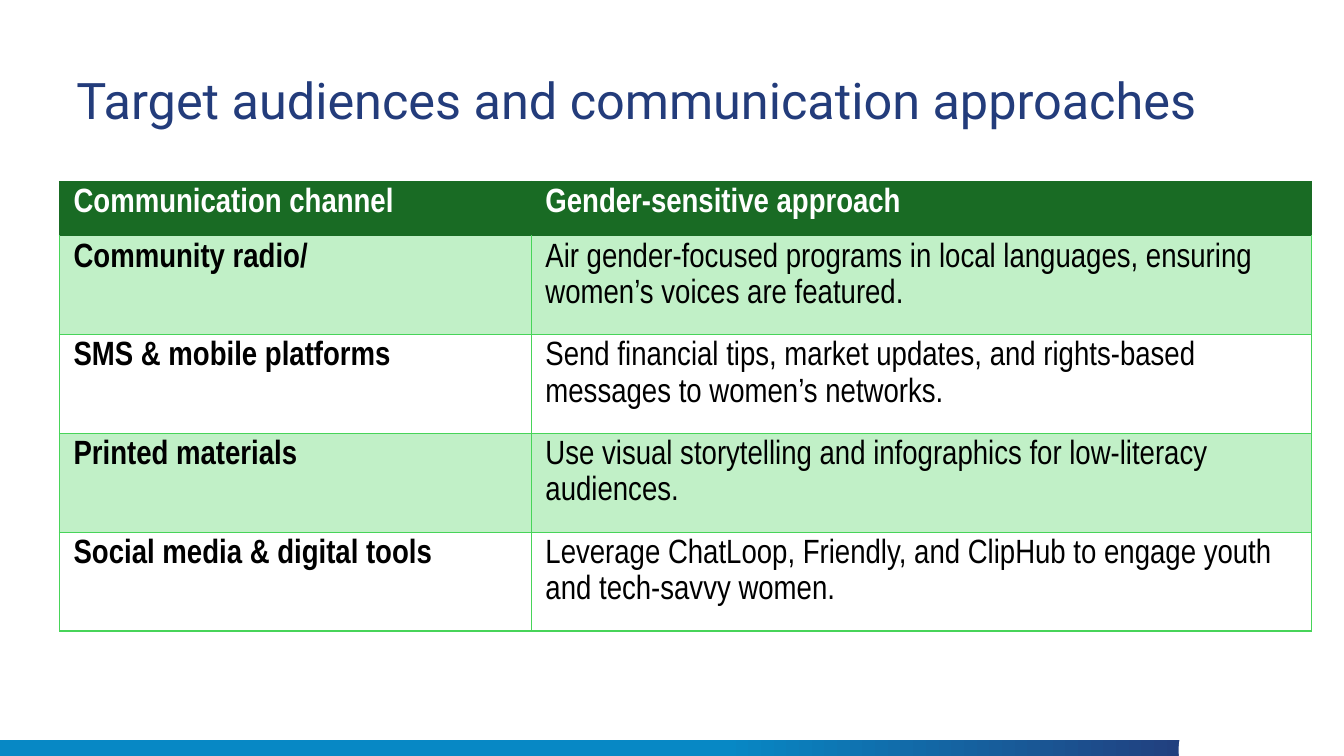
import pptx
import pptx.util
import pptx.dml.color
import pptx.enum.shapes
import pptx.enum.text
import pptx.oxml.ns
import lxml.etree

Inches = pptx.util.Inches
Pt = pptx.util.Pt
RGBColor = pptx.dml.color.RGBColor

NAVY = RGBColor(0x23, 0x3C, 0x7B)
BLUE = RGBColor(0x07, 0x88, 0xC5)
WHITE = RGBColor(0xFF, 0xFF, 0xFF)
BLACK = RGBColor(0x00, 0x00, 0x00)
DARK_GREEN = RGBColor(0x19, 0x6B, 0x24)
PALE_GREEN = RGBColor(0xC1, 0xF0, 0xC7)
LINE_GREEN = RGBColor(0x47, 0xD4, 0x59)

CHANNELS = [
    ("Communication channel", "Gender-sensitive approach"),
    ("Community radio/",
     "Air gender-focused programs in local languages, ensuring women’s voices are featured."),
    ("SMS & mobile platforms",
     "Send financial tips, market updates, and rights-based messages to women’s networks."),
    ("Printed materials",
     "Use visual storytelling and infographics for low-literacy audiences."),
    ("Social media & digital tools",
     "Leverage ChatLoop, Friendly, and ClipHub to engage youth and tech-savvy women."),
]


def set_border(cell, side, color):
    properties = cell._tc.get_or_add_tcPr()
    line = lxml.etree.Element(pptx.oxml.ns.qn("a:" + side), w=str(Pt(1)))
    fill = lxml.etree.SubElement(line, pptx.oxml.ns.qn("a:solidFill"))
    lxml.etree.SubElement(fill, pptx.oxml.ns.qn("a:srgbClr"), val=str(color))
    properties.append(line)


def style_text(paragraph, font_name, size, color, bold):
    for run in paragraph.runs:
        run.font.name = font_name
        run.font.size = Pt(size)
        run.font.color.rgb = color
        run.font.bold = bold


deck = pptx.Presentation()
deck.slide_width = Inches(13.33)
deck.slide_height = Inches(7.5)
slide = deck.slides.add_slide(deck.slide_layouts[6])

footer_band = slide.shapes.add_shape(
    pptx.enum.shapes.MSO_SHAPE.RECTANGLE, Inches(0), Inches(7.34), Inches(11.95), Inches(0.16))
footer_band.fill.gradient()
footer_band.fill.gradient_angle = 180
for stop, color, position in zip(footer_band.fill.gradient_stops, (NAVY, BLUE), (0, 0.4)):
    stop.color.rgb = color
    stop.position = position

footer_cutout = slide.shapes.add_shape(
    pptx.enum.shapes.MSO_SHAPE.OVAL, Inches(11.69), Inches(6.87), Inches(1.14), Inches(1.14))
footer_cutout.fill.solid()
footer_cutout.fill.fore_color.rgb = WHITE
for footer_part in (footer_band, footer_cutout):
    footer_part.line.fill.background()
    footer_part.shadow.inherit = False

title = slide.shapes.add_textbox(Inches(0.66), Inches(0.7), Inches(12.01), Inches(1.03))
title.text_frame.word_wrap = True
title.text_frame.vertical_anchor = pptx.enum.text.MSO_ANCHOR.TOP
title.text_frame.text = "Target audiences and communication approaches"
title.text_frame.paragraphs[0].line_spacing = 0.9
style_text(title.text_frame.paragraphs[0], "Roboto", 36, NAVY, False)

approaches = slide.shapes.add_table(
    len(CHANNELS), 2, Inches(0.59), Inches(1.8), Inches(12.42), Inches(4.46)).table
approaches.horz_banding = False
for column, width in zip(approaches.columns, (4.68, 7.74)):
    column.width = Inches(width)

for row_index, entries in enumerate(CHANNELS):
    is_header = row_index == 0
    approaches.rows[row_index].height = Inches(0.54 if is_header else 0.98)
    for column_index, entry in enumerate(entries):
        cell = approaches.cell(row_index, column_index)
        cell.margin_left = cell.margin_right = Inches(0.14)
        cell.margin_top = Inches(0.02)
        cell.margin_bottom = Inches(0)
        cell.text_frame.text = entry
        paragraph = cell.text_frame.paragraphs[0]
        paragraph.line_spacing = 1.15
        paragraph.space_after = Pt(8)
        style_text(paragraph, "Arial Narrow", 24, WHITE if is_header else BLACK,
                   is_header or column_index == 0)

        side_color = DARK_GREEN if is_header else LINE_GREEN
        top_color = DARK_GREEN if row_index <= 1 else LINE_GREEN
        for side, color in (("lnL", side_color), ("lnR", side_color),
                            ("lnT", top_color), ("lnB", side_color)):
            set_border(cell, side, color)

        if is_header or row_index % 2:
            cell.fill.solid()
            cell.fill.fore_color.rgb = DARK_GREEN if is_header else PALE_GREEN
        else:
            cell.fill.background()

deck.save("out.pptx")
